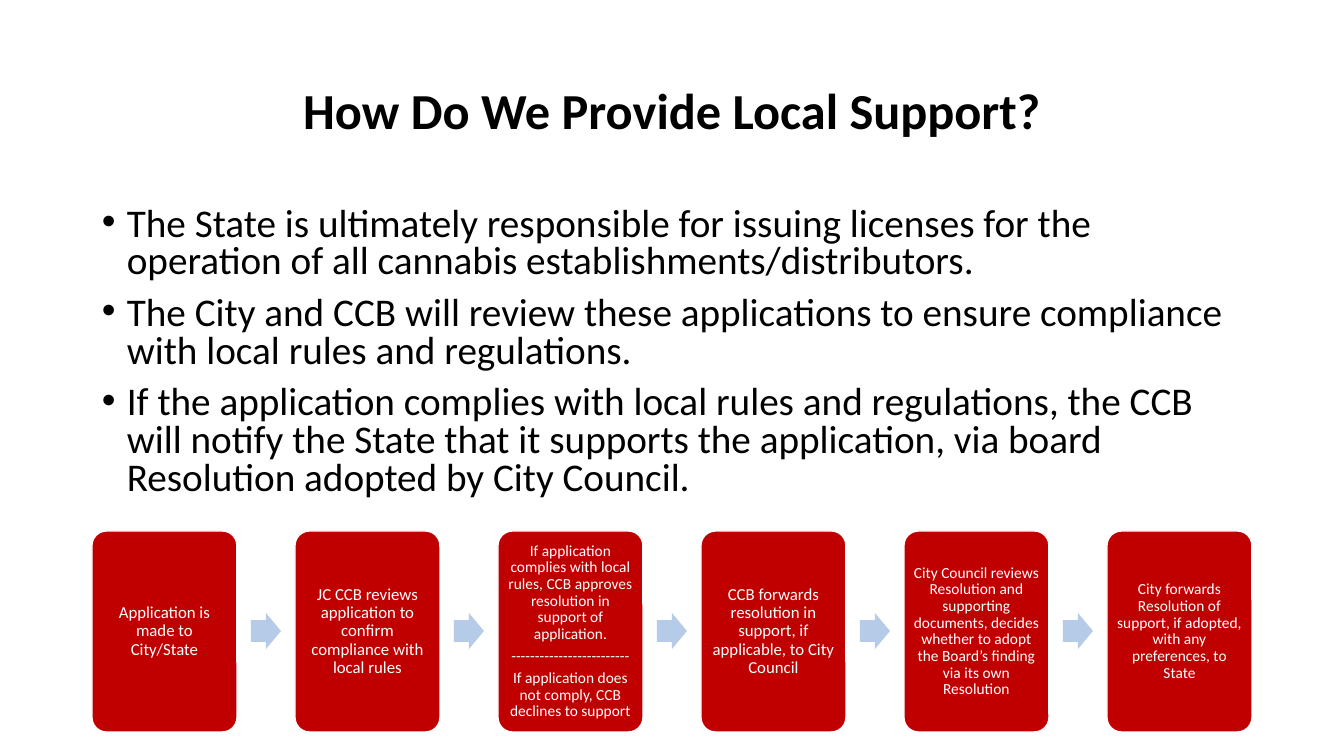
import pptx
import pptx.dml.color
import pptx.enum.shapes
import pptx.enum.text
import pptx.oxml.ns
import pptx.util
from lxml import etree

PIXELS_PER_INCH = 100.8
SHAPE = pptx.enum.shapes.MSO_SHAPE
ALIGN = pptx.enum.text.PP_ALIGN
ANCHOR = pptx.enum.text.MSO_ANCHOR

TITLE = "How Do We Provide Local Support?"
BULLETS = [
    "The State is ultimately responsible for issuing licenses for the operation of all cannabis "
    "establishments/distributors.",
    "The City and CCB will review these applications to ensure compliance with local rules and regulations.",
    "If the application complies with local rules and regulations, the CCB will notify the State that it "
    "supports the application, via board Resolution adopted by City Council.",
]
# Each step: font size and paragraphs
STEPS = [
    (12, ["Application is made to City/State"]),
    (12, ["JC CCB reviews application to confirm compliance with local rules"]),
    (11, ["If application complies with local rules, CCB approves resolution in support of application.",
          "-" * 25,
          "If application does not comply, CCB declines to support"]),
    (12, ["CCB forwards resolution in support, if applicable, to City Council"]),
    (11, ["City Council reviews Resolution and supporting documents, decides whether to adopt "
          "the Board’s finding via its own Resolution"]),
    (11, ["City forwards Resolution of support, if adopted, with any preferences, to State"]),
]


def px(length):
    return pptx.util.Emu(round(length * 914400 / PIXELS_PER_INCH))


def color(hex_string):
    return pptx.dml.color.RGBColor.from_string(hex_string)


class SlideBuilder:
    font = "Calibri"
    black = "000000"
    white = "FFFFFF"
    red = "C00000"
    pale_blue = "B5CBE7"

    def __init__(self, slide):
        self.slide = slide

    def fill_text(self, frame, paragraphs, size, hex_color=black, bold=False, align=ALIGN.LEFT,
                  anchor=ANCHOR.TOP, line_spacing=0.9, before=0, after=0, bulleted=False):
        frame.word_wrap = True
        frame.vertical_anchor = anchor
        for index, text in enumerate(paragraphs):
            paragraph = frame.add_paragraph() if index else frame.paragraphs[0]
            paragraph.alignment = align
            paragraph.line_spacing = line_spacing
            paragraph.space_before = pptx.util.Pt(before)
            paragraph.space_after = pptx.util.Pt(after)
            run = paragraph.add_run()
            run.text = text
            run.font.name = self.font
            run.font.size = pptx.util.Pt(size)
            run.font.bold = bold
            run.font.color.rgb = color(hex_color)
            if bulleted:
                self.add_bullet(paragraph)

    def add_bullet(self, paragraph, indent=25):
        properties = paragraph._p.get_or_add_pPr()
        properties.set("marL", str(px(indent)))
        properties.set("indent", str(-px(indent)))
        for tag, attribute, value in [("a:buFont", "typeface", "Arial"), ("a:buChar", "char", "•")]:
            element = etree.SubElement(properties, pptx.oxml.ns.qn(tag))
            element.set(attribute, value)

    def text_box(self, left, top, width, height, paragraphs, **text_format):
        box = self.slide.shapes.add_textbox(px(left), px(top), px(width), px(height))
        self.fill_text(box.text_frame, paragraphs, **text_format)

    def preset(self, kind, left, top, width, height, fill, adjustments, line=None):
        shape = self.slide.shapes.add_shape(kind, px(left), px(top), px(width), px(height))
        shape.shadow.inherit = False
        for index, value in enumerate(adjustments):
            shape.adjustments[index] = value
        shape.fill.solid()
        shape.fill.fore_color.rgb = color(fill)
        if line:
            shape.line.color.rgb = color(line)
            shape.line.width = pptx.util.Pt(1)
        else:
            shape.line.fill.background()
        return shape

    def step(self, left, top, width, height, paragraphs, size):
        card = self.preset(SHAPE.ROUNDED_RECTANGLE, left, top, width, height,
                           self.red, [0.1], line=self.white)
        frame = card.text_frame
        frame.margin_left = frame.margin_right = frame.margin_top = frame.margin_bottom = px(5)
        self.fill_text(frame, paragraphs, size, self.white, align=ALIGN.CENTER,
                       anchor=ANCHOR.MIDDLE, after=0.35 * size)

    def arrow(self, left, top, width, height):
        self.preset(SHAPE.RIGHT_ARROW, left, top, width, height, self.pale_blue, [0.6, 0.5])


def main():
    presentation = pptx.Presentation()
    presentation.slide_width, presentation.slide_height = px(1344), px(756)
    builder = SlideBuilder(presentation.slides.add_slide(presentation.slide_layouts[6]))

    left, width = 92, 1160
    builder.text_box(left, 40, width, 146, [TITLE], size=36, bold=True,
                     align=ALIGN.CENTER, anchor=ANCHOR.MIDDLE)
    builder.text_box(left, 202, width, 322, BULLETS, size=28, line_spacing=0.8,
                     before=10, bulleted=True)

    card_top, card_width, card_height = 531, 145, 201
    arrow_width, arrow_height = 30, 36
    pitch = (width - card_width) / (len(STEPS) - 1)
    for index, (size, paragraphs) in enumerate(STEPS):
        card_left = round(left + index * pitch)
        builder.step(card_left, card_top, card_width, card_height, paragraphs, size)
        if index < len(STEPS) - 1:
            arrow_left = card_left + round((card_width + pitch - arrow_width) / 2)
            arrow_top = card_top + (card_height - arrow_height) // 2
            builder.arrow(arrow_left, arrow_top, arrow_width, arrow_height)

    presentation.save("out.pptx")


if __name__ == "__main__":
    main()
